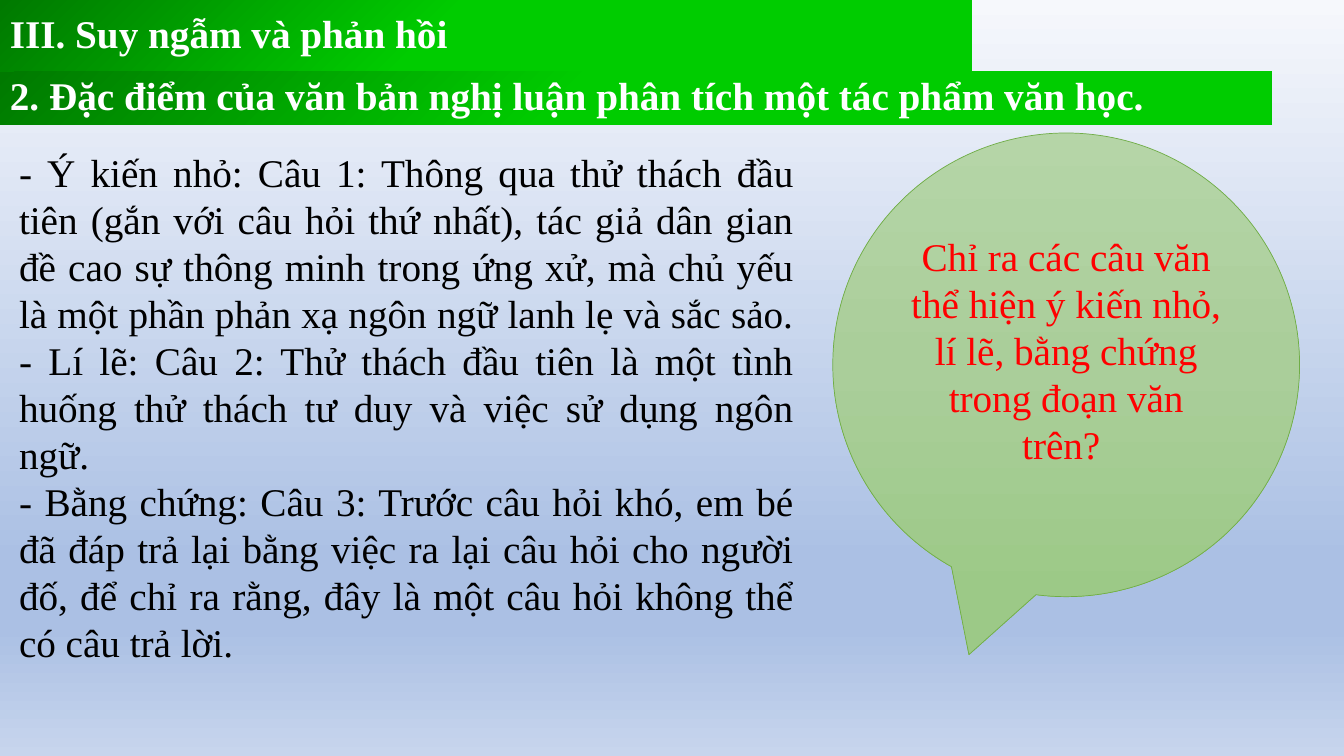
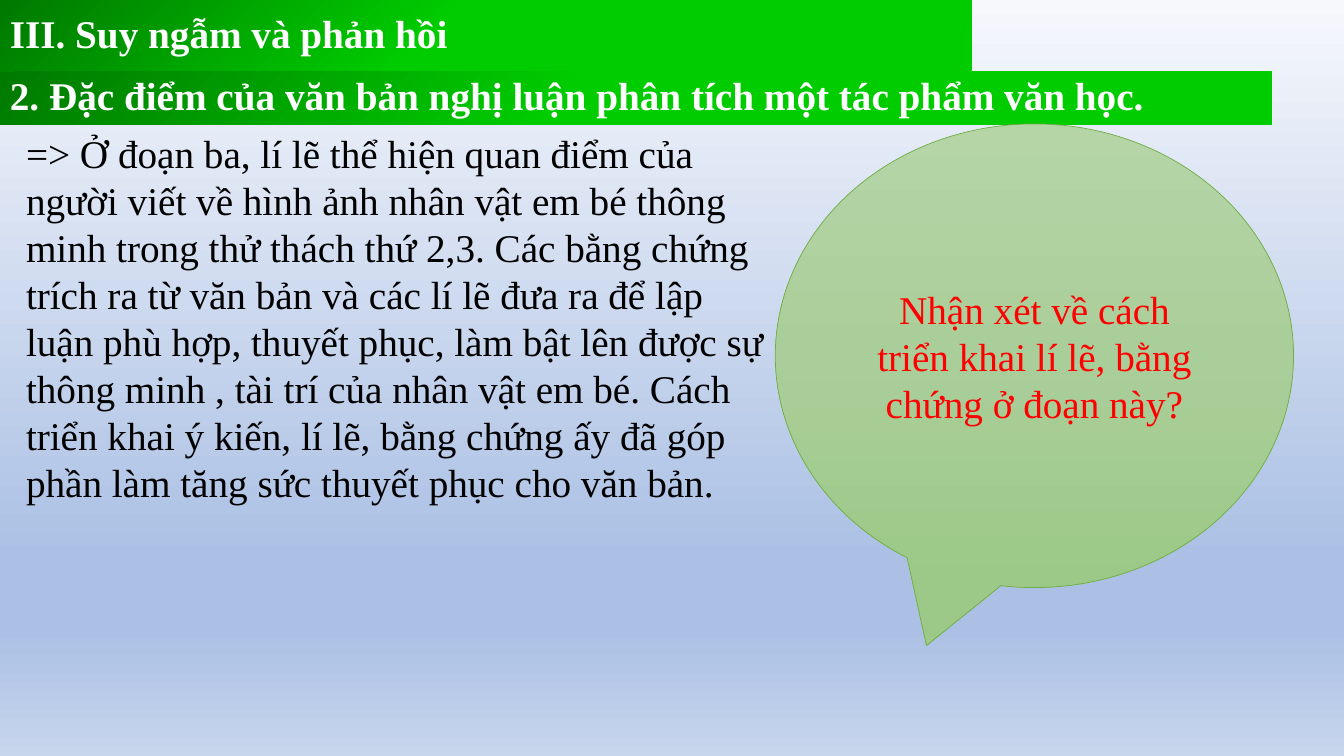
from lxml.etree import SubElement
from pptx import Presentation
from pptx.dml.color import RGBColor
from pptx.enum.shapes import MSO_SHAPE
from pptx.enum.text import MSO_ANCHOR, PP_ALIGN
from pptx.oxml.ns import qn
from pptx.util import Inches, Pt

FONT = "Times New Roman"
SIZE = Pt(28)
WHITE = RGBColor(0xFF, 0xFF, 0xFF)
BLACK = RGBColor(0, 0, 0)
RED = RGBColor(0xFF, 0, 0)
EDGE = RGBColor(0x70, 0xAD, 0x47)
MIST = RGBColor(0xF6, 0xF8, 0xFC)
BLUE = RGBColor(0xAB, 0xC0, 0xE4)
SKY = RGBColor(0xC7, 0xD5, 0xED)
DARK = RGBColor(0, 0x79, 0)
GREEN = RGBColor(0, 0xCC, 0)
PALE = RGBColor(0xB5, 0xD5, 0xA7)
SAGE = RGBColor(0xAA, 0xCE, 0x9A)
LEAF = RGBColor(0x9C, 0xC9, 0x87)

SKY_STOPS = [(0, MIST), (74, BLUE), (83, BLUE), (100, SKY)]
BAND_STOPS = [(0, DARK), (45, GREEN)]
CALL_STOPS = [(0, PALE), (50, SAGE), (100, LEAF)]

BANDS = [
    ("III. Suy ngẫm và phản hồi", (0, 0, 9.64, 0.71)),
    ("2. Đặc điểm của văn bản nghị luận phân tích một tác phẩm văn học.",
     (0, 0.71, 12.61, 0.53)),
]
POINTS = [
    "- Ý kiến nhỏ: Câu 1: Thông qua thử thách đầu tiên (gắn với câu hỏi thứ nhất), "
    "tác giả dân gian đề cao sự thông minh trong ứng xử, mà chủ yếu là một phần "
    "phản xạ ngôn ngữ lanh lẹ và sắc sảo. ",
    "- Lí lẽ: Câu 2: Thử thách đầu tiên là một tình huống thử thách tư duy và việc "
    "sử dụng ngôn ngữ. ",
    "- Bằng chứng: Câu 3: Trước câu hỏi khó, em bé đã đáp trả lại bằng việc ra lại "
    "câu hỏi cho người đố, để chỉ ra rằng, đây là một câu hỏi không thể có câu trả lời. ",
]
REMARK = [
    "=> Ở đoạn ba, lí lẽ thể hiện quan điểm của người viết về hình ảnh nhân vật em bé "
    "thông minh trong thử thách thứ 2,3. Các bằng chứng trích ra từ văn bản và các lí lẽ "
    "đưa ra để lập luận phù hợp, thuyết phục, làm bật lên được sự thông minh , tài trí "
    "của nhân vật em bé. Cách triển khai ý kiến, lí lẽ, bằng chứng ấy đã góp phần làm "
    "tăng sức thuyết phục cho văn bản.",
]


def paint(host, fill, stops, angle):
    """Give the host a linear gradient running clockwise at the angle."""
    fill.gradient()
    fill.gradient_angle = 360 - angle
    marks = next(host.element.iter(qn("a:gsLst")))
    for old in list(marks):
        marks.remove(old)
    for place, color in stops:
        stop = SubElement(marks, qn("a:gs"), pos=str(place * 1000))
        SubElement(stop, qn("a:srgbClr"), val=str(color))


def write(shape, texts, color, align=PP_ALIGN.LEFT, bold=False, space=1.0):
    """Fill the shape with one styled paragraph per text."""
    frame = shape.text_frame
    frame.word_wrap = True
    frame.text = "\n".join(texts)
    for para in frame.paragraphs:
        para.alignment = align
        para.line_spacing = space
        para.font.name = FONT
        para.font.size = SIZE
        para.font.bold = bold
        para.font.color.rgb = color
    return frame


def add_form(slide, kind, box, stops, angle):
    """Add a preset shape with a gradient fill and no shadow."""
    shape = slide.shapes.add_shape(kind, *map(Inches, box))
    shape.shadow.inherit = False
    paint(shape, shape.fill, stops, angle)
    return shape


def add_band(slide, text, box):
    """Add a green heading band."""
    band = add_form(slide, MSO_SHAPE.RECTANGLE, box, BAND_STOPS, 45)
    band.line.fill.background()
    frame = write(band, [text], WHITE, bold=True, space=0.9)
    frame.vertical_anchor = MSO_ANCHOR.MIDDLE


def add_body(slide, texts, box, align):
    """Add the main text."""
    body = slide.shapes.add_textbox(*map(Inches, box))
    write(body, texts, BLACK, align)


def add_call(slide, text, box, bottom):
    """Add a speech bubble that asks a question."""
    call = add_form(slide, MSO_SHAPE.OVAL_CALLOUT, box, CALL_STOPS, 90)
    call.line.color.rgb = EDGE
    call.line.width = Pt(0.5)
    frame = write(call, [text], RED, PP_ALIGN.CENTER)
    frame.vertical_anchor = MSO_ANCHOR.MIDDLE
    frame.margin_bottom = Inches(bottom)


def add_page(deck):
    """Add a slide with the shared backdrop and bands."""
    slide = deck.slides.add_slide(deck.slide_layouts[6])
    paint(slide, slide.background.fill, SKY_STOPS, 90)
    for text, box in BANDS:
        add_band(slide, text, box)
    return slide


def main():
    """Build and save the slides."""
    deck = Presentation()
    deck.slide_width = Inches(13.33)
    deck.slide_height = Inches(7.5)

    slide = add_page(deck)
    add_body(slide, POINTS, (0.09, 1.42, 7.88, 5.59), PP_ALIGN.JUSTIFY)
    add_call(slide, "Chỉ ra các câu văn thể hiện ý kiến nhỏ, lí lẽ, bằng chứng "
             "trong đoạn văn trên? ", (8.26, 1.32, 4.63, 4.6), 0.34)

    slide = add_page(deck)
    add_call(slide, "Nhận xét về cách triển khai lí lẽ, bằng chứng ở đoạn này?",
             (7.69, 1.23, 5.14, 4.6), 0.05)
    add_body(slide, REMARK, (0.16, 1.23, 7.53, 4.34), PP_ALIGN.LEFT)

    deck.save("out.pptx")


if __name__ == "__main__":
    main()
